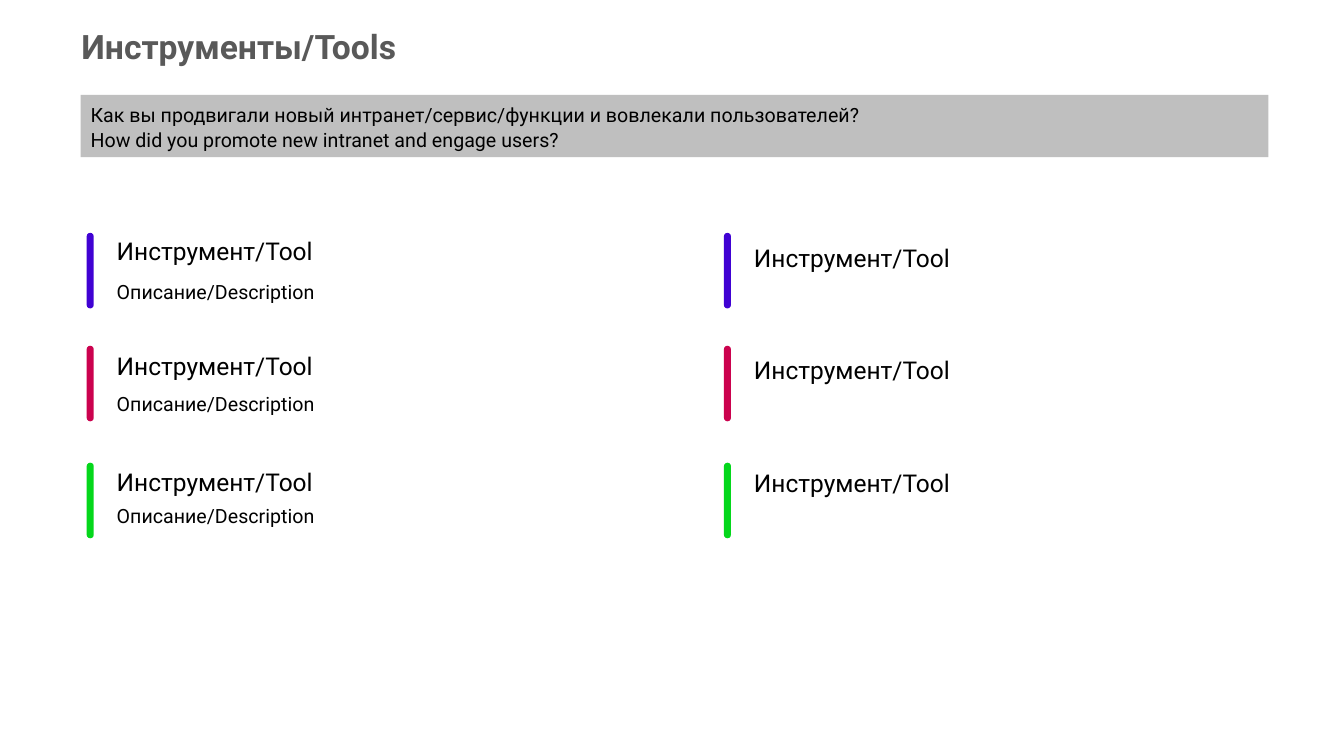
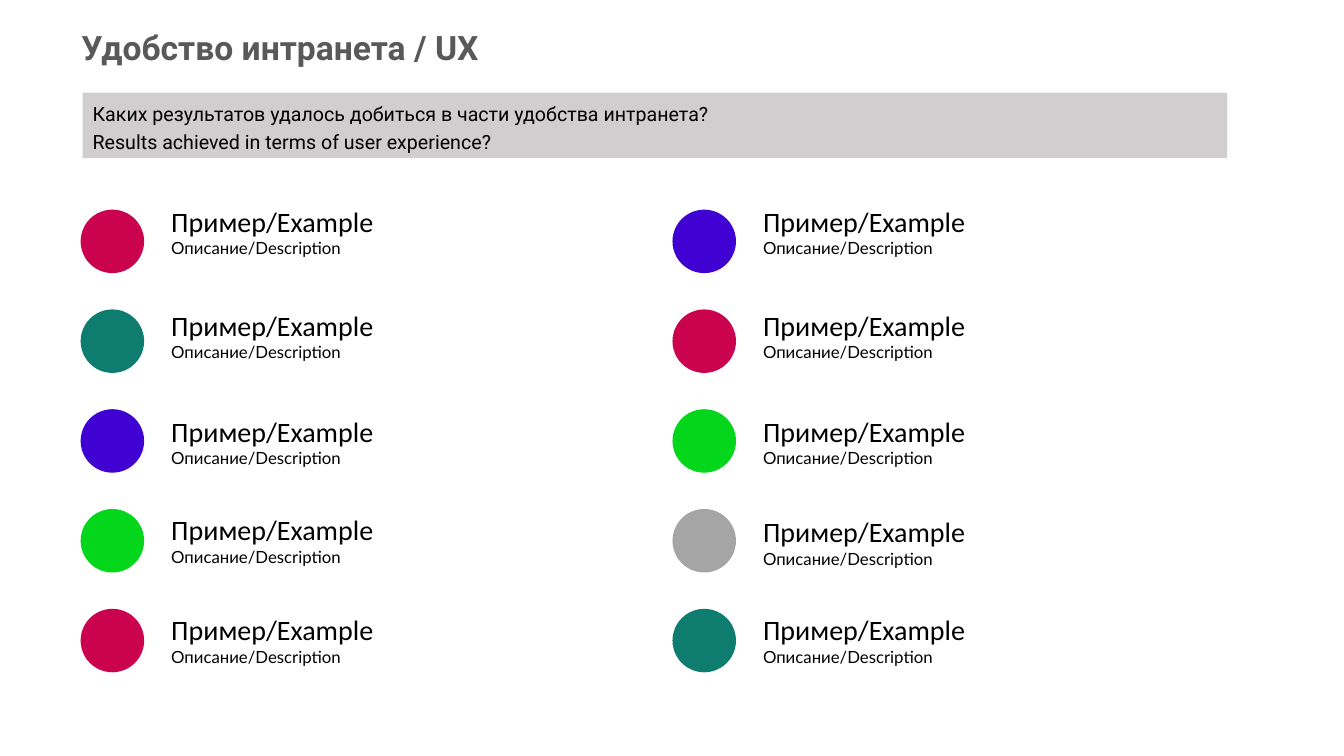
from pptx import Presentation
from pptx.dml.color import RGBColor
from pptx.enum.shapes import MSO_SHAPE as Shape
from pptx.enum.text import MSO_ANCHOR as Anchor, PP_ALIGN as Align
from pptx.util import Inches, Pt

BLACK = RGBColor(0x00, 0x00, 0x00)
GREY = RGBColor(0x59, 0x59, 0x59)
SILVER = RGBColor(0xBF, 0xBF, 0xBF)
PALE = RGBColor(0xD0, 0xCE, 0xCE)
ASH = RGBColor(0xA5, 0xA5, 0xA5)
BLUE = RGBColor(0x40, 0x02, 0xD3)
RED = RGBColor(0xCB, 0x02, 0x4E)
GREEN = RGBColor(0x04, 0xD7, 0x1B)
TEAL = RGBColor(0x0E, 0x7D, 0x6F)


def add_text(slide, box, *lines, size=14, font="Roboto", color=BLACK,
             bold=False, space=1.0, kind=None, fill=None):
    """Write lines in a text box, or in a filled shape if kind is given.

    A line is a string, or a (string, size, font) tuple.
    """
    area = [Inches(n) for n in box]
    if kind is None:
        shape = slide.shapes.add_textbox(*area)
    else:
        shape = slide.shapes.add_shape(kind, *area)
        shape.shadow.inherit = False
        shape.fill.solid()
        shape.fill.fore_color.rgb = fill
        shape.line.fill.background()
    frame = shape.text_frame
    frame.word_wrap = True
    frame.vertical_anchor = Anchor.TOP if kind is None else Anchor.MIDDLE
    for i, line in enumerate(lines):
        words, pts, face = (line, size, font) if isinstance(line, str) else line
        para = frame.add_paragraph() if i else frame.paragraphs[0]
        para.alignment = Align.LEFT
        para.line_spacing = space
        run = para.add_run()
        run.text = words
        run.font.size = Pt(pts)
        run.font.name = face
        run.font.bold = bold
        run.font.color.rgb = color
    return shape


def add_page(title, top, band, fill, space, *ask):
    """Add a slide with its title and the band that asks the question."""
    slide = deck.slides.add_slide(deck.slide_layouts[6])
    add_text(slide, (0.71, top, 8.62, 0.71), title,
             size=24, color=GREY, bold=True, space=0.9)
    add_text(slide, band, *ask, space=space, kind=Shape.RECTANGLE, fill=fill)
    return slide


deck = Presentation()
deck.slide_width = Inches(13.33)
deck.slide_height = Inches(7.5)

# Tools
slide = add_page(
    "Инструменты/Tools", 0.25, (0.8, 0.94, 11.78, 0.62), SILVER, 1.1,
    "Как вы продвигали новый интранет/сервис/функции и вовлекали пользователей?",
    "How did you promote new intranet and engage users?")
bars = [(2.31, BLUE), (3.43, RED), (4.59, GREEN)]
for left, tops in [(0.86, (2.29, 3.43, 4.58)), (7.18, (2.36, 3.47, 4.59))]:
    for (y, color), top in zip(bars, tops):
        bar = add_text(slide, (left, y, 0.07, 0.75),
                       kind=Shape.ROUND_2_SAME_RECTANGLE, fill=color)
        bar.adjustments[0] = bar.adjustments[1] = 0.5
        add_text(slide, (left + 0.2, top, 2.5, 0.4), "Инструмент/Tool", size=17.5)
for row in range(3):
    add_text(slide, (1.06, 2.73 + 1.11 * row, 4.63, 0.34), "Описание/Description")

# User experience
slide = add_page(
    "Удобство интранета / UX", 0.26, (0.82, 0.92, 11.35, 0.65), PALE, 1.2,
    "Каких результатов удалось добиться в части удобства интранета?",
    "Results achieved in terms of user experience?")
cols = [
    (0.8, (RED, TEAL, BLUE, GREEN, RED), (1.98, 3.01, 4.06, 5.04, 6.03)),
    (6.67, (BLUE, RED, GREEN, ASH, TEAL), (1.98, 3.01, 4.06, 5.06, 6.03)),
]
for left, colors, tops in cols:
    for row, (color, top) in enumerate(zip(colors, tops)):
        add_text(slide, (left, 2.08 + 0.99 * row, 0.63, 0.63),
                 kind=Shape.OVAL, fill=color)
        add_text(slide, (left + 0.8, top, 2.66, 0.64),
                 ("Пример/Example", 20, "Calibri"),
                 ("Описание/Description", 12, "Lato"))

deck.save("out.pptx")
